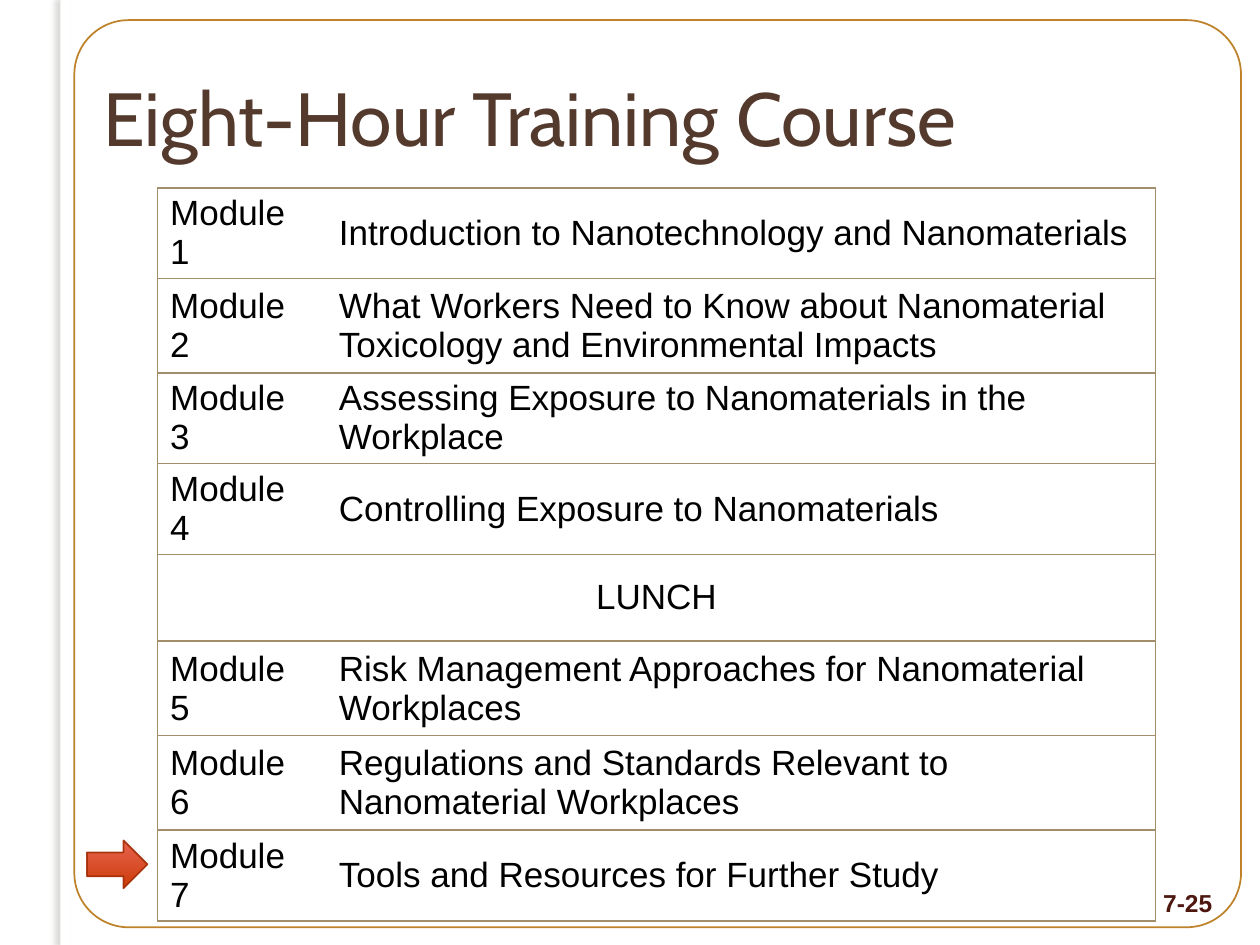
import pptx
import pptx.dml.color
import pptx.enum.shapes
import pptx.enum.text
import pptx.oxml
import pptx.oxml.ns
import pptx.util
from pptx.util import Inches

THEME = {
    "white": "FFFFFF", "black": "000000", "title": "533A2C", "number": "4E1710",
    "frame": "B77513", "shadow": "74726D", "border": "A28E6A",
    "arrow_top": "E76450", "arrow_bottom": "CC3B08", "arrow_line": "A32F06",
    "title_font": "Cabin", "body_font": "Arial",
    "title_size": 43, "body_size": 20, "number_size": 14,
}
TITLE = "Eight-Hour Training Course"
PAGE_NUMBER = "7-25"
LUNCH = "LUNCH"
SESSIONS = [
    ("Introduction to Nanotechnology and Nanomaterials", 0.72),
    ("What Workers Need to Know about Nanomaterial Toxicology and Environmental Impacts", 0.75),
    ("Assessing Exposure to Nanomaterials in the Workplace", 0.72),
    ("Controlling Exposure to Nanomaterials", 0.72),
    (LUNCH, 0.69),
    ("Risk Management Approaches for Nanomaterial Workplaces", 0.75),
    ("Regulations and Standards Relevant to Nanomaterial Workplaces", 0.75),
    ("Tools and Resources for Further Study", 0.72),
]
COLUMN_WIDTHS = [1.34, 6.58]
ALIGN = pptx.enum.text.PP_ALIGN
MIDDLE = pptx.enum.text.MSO_ANCHOR.MIDDLE
SHAPES = pptx.enum.shapes.MSO_SHAPE
NAMESPACE = pptx.oxml.ns.nsdecls("a")
CELL_FORMAT = {
    "vertical_anchor": MIDDLE, "margin_top": Inches(0.02), "margin_bottom": Inches(0.02),
}


def color(name):
    return pptx.dml.color.RGBColor.from_string(THEME[name])


def box(left, top, width, height):
    return [Inches(value) for value in (left, top, width, height)]


def apply(target, formats):
    for attribute, value in formats.items():
        setattr(target, attribute, value)


def write(holder, text, color_name, font, size, align=ALIGN.LEFT, bold=False):
    frame = holder.text_frame
    frame.word_wrap = True
    frame.text = text
    paragraph = frame.paragraphs[0]
    paragraph.alignment = align
    apply(paragraph.font, {
        "name": THEME[font], "size": pptx.util.Pt(THEME[size]), "bold": bold})
    paragraph.font.color.rgb = color(color_name)


def add_shape(slide, kind, place, line=None):
    shape = slide.shapes.add_shape(kind, *box(*place))
    shape.shadow.inherit = False
    if line is None:
        shape.line.fill.background()
    else:
        shape.line.color.rgb = color(line)
        shape.line.width = pptx.util.Pt(1)
        for tint in shape.line._get_or_add_ln().iter(pptx.oxml.ns.qn("a:srgbClr")):
            tint.append(pptx.oxml.parse_xml(f'<a:alpha {NAMESPACE} val="90000"/>'))
    return shape


def add_edge_strip(slide):
    strip = add_shape(slide, SHAPES.RECTANGLE, (0.48, 0, 0.08, 7.5))
    strip.fill.solid()
    strip.fill.fore_color.rgb = color("white")
    effects = strip._element.spPr.find(pptx.oxml.ns.qn("a:effectLst"))
    distance = pptx.util.Pt(3)
    effects.append(pptx.oxml.parse_xml(
        f'<a:outerShdw {NAMESPACE} blurRad="{distance}" dist="{distance}" dir="10800000" '
        f'algn="tl" rotWithShape="0"><a:srgbClr val="{THEME["shadow"]}">'
        '<a:alpha val="25000"/></a:srgbClr></a:outerShdw>'))


def add_frame(slide):
    frame = add_shape(slide, SHAPES.ROUNDED_RECTANGLE, (0.59, 0.16, 9.26, 7.2), "frame")
    frame.adjustments[0] = 0.06
    frame.fill.background()


def add_arrow(slide):
    arrow = add_shape(slide, SHAPES.RIGHT_ARROW, (0.69, 6.67, 0.48, 0.38), "arrow_line")
    arrow.fill.gradient()
    arrow.fill.gradient_angle = 270
    for stop, name in zip(arrow.fill.gradient_stops, ("arrow_top", "arrow_bottom")):
        stop.color.rgb = color(name)


def style_cell(cell, text, sides, align=ALIGN.LEFT):
    write(cell, text, "black", "body_font", "body_size", align)
    apply(cell, CELL_FORMAT)
    properties = cell._tc.get_or_add_tcPr()
    solid = f'<a:solidFill><a:srgbClr val="{THEME["border"]}"/></a:solidFill>'
    for side in "LRTB":
        paint = solid if side in sides else "<a:noFill/>"
        properties.append(pptx.oxml.parse_xml(
            f'<a:ln{side} {NAMESPACE} w="{pptx.util.Pt(1)}">{paint}</a:ln{side}>'))
    cell.fill.solid()
    cell.fill.fore_color.rgb = color("white")


def add_schedule(slide):
    height = sum(row_height for _, row_height in SESSIONS)
    place = box(1.25, 1.49, sum(COLUMN_WIDTHS), height)
    table = slide.shapes.add_table(len(SESSIONS), len(COLUMN_WIDTHS), *place).table
    table.first_row = table.horz_banding = False
    for column, width in zip(table.columns, COLUMN_WIDTHS):
        column.width = Inches(width)
    module = 0
    for index, (topic, row_height) in enumerate(SESSIONS):
        table.rows[index].height = Inches(row_height)
        first, second = table.cell(index, 0), table.cell(index, 1)
        if topic == LUNCH:
            first.merge(second)
            style_cell(first, topic, "LRTB", ALIGN.CENTER)
            style_cell(second, "", "RTB")
        else:
            module += 1
            style_cell(first, f"Module {module}", "LTB")
            style_cell(second, topic, "RTB")


def main():
    presentation = pptx.Presentation()
    presentation.slide_width, presentation.slide_height = Inches(10), Inches(7.5)
    slide = presentation.slides.add_slide(presentation.slide_layouts[5])

    add_edge_strip(slide)
    add_frame(slide)
    number = slide.shapes.add_textbox(*box(9.02, 7, 0.7, 0.29))
    write(number, PAGE_NUMBER, "number", "body_font", "number_size", ALIGN.RIGHT, True)

    title = slide.shapes.title
    title.left, title.top, title.width, title.height = box(0.72, 0.3, 9.05, 1.25)
    write(title, TITLE, "title", "title_font", "title_size")
    title.text_frame.vertical_anchor = MIDDLE

    add_schedule(slide)
    add_arrow(slide)
    presentation.save("out.pptx")


if __name__ == "__main__":
    main()
